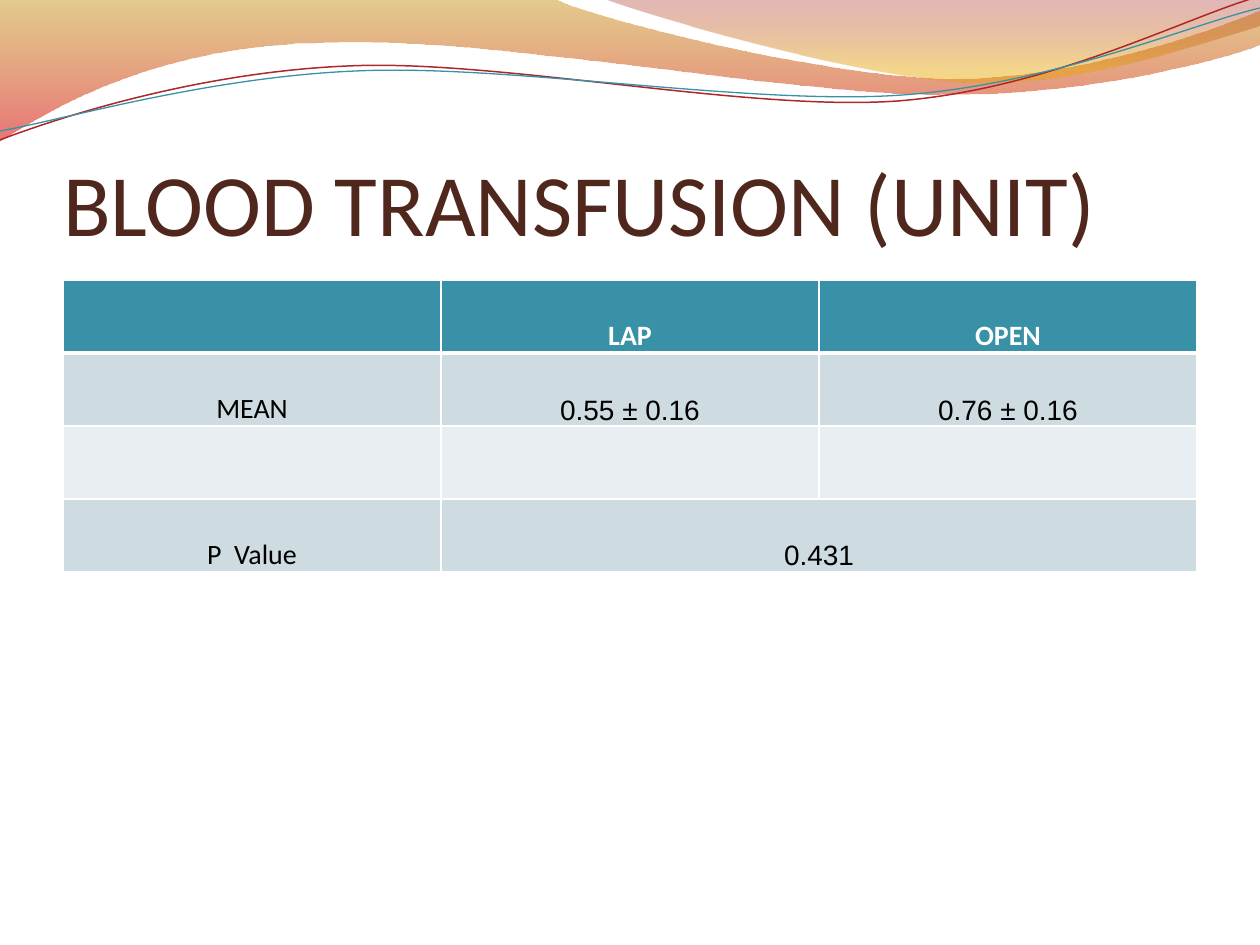
from math import cos, radians, sin

from lxml import etree
from pptx import Presentation
from pptx.dml.color import RGBColor
from pptx.enum.text import MSO_ANCHOR, MSO_AUTO_SIZE, PP_ALIGN
from pptx.oxml.ns import qn
from pptx.util import Pt

SCALE = 914400 / 126
BOTTOM = MSO_ANCHOR.BOTTOM
LEFT, CENTER = PP_ALIGN.LEFT, PP_ALIGN.CENTER

WHITE = RGBColor(0xFF, 0xFF, 0xFF)
BLACK = RGBColor(0x00, 0x00, 0x00)
BROWN = RGBColor(0x4F, 0x27, 0x1C)
TEAL = RGBColor(0x38, 0x91, 0xA7)
RED = RGBColor(0xAC, 0x28, 0x29)
BAND_DARK = RGBColor(0xCE, 0xDC, 0xE1)
BAND_LIGHT = RGBColor(0xE8, 0xEE, 0xF1)
GOLD = RGBColor(0xC3, 0x8B, 0x00)
SCARLET = RGBColor(0xD6, 0x03, 0x05)
CRIMSON = RGBColor(0xA1, 0x11, 0x12)
AMBER = RGBColor(0xE9, 0xA6, 0x00)

TITLE = "BLOOD TRANSFUSION (UNIT)"
ROWS = [
    ("", "LAP", "OPEN"),
    ("MEAN", "0.55 ± 0.16", "0.76 ± 0.16"),
    ("", "", ""),
    ("P  Value", "0.431", ""),
]
ROW_FILLS = [TEAL, BAND_DARK, BAND_LIGHT, BAND_DARK]
TABLE_LEFT, TABLE_TOP, COLUMN_WIDTH, ROW_HEIGHT = 63, 280, 378, 73

# Each wave starts with its box: left, top, width, height.
# Each step is one point (straight line) or three points (cubic curve), in px.
# Gradient stops are (position %, colour, opacity %).
WAVE_FILLS = [
    ((-1, -1, 1263, 144),
     [[(0, 0)], [(554, -1)],
      [(600, 21), (837, 79), (955, 79)],
      [(1075, 79), (1207, 33), (1260, 11)], [(1261, 45)],
      [(1239, 55), (1096, 96), (940, 95)],
      [(784, 95), (481, 35), (324, 43)],
      [(163, 45), (58, 105), (-1, 142)], [(0, 0)]],
     [(0, GOLD, 45), (100, SCARLET, 55)]),
    ((604, -1, 656, 88),
     [[(604, -1)],
      [(641, 14), (859, 78), (969, 82)],
      [(1079, 87), (1211, 40), (1260, 26)], [(1260, 0)], [(604, -1)]],
     [(0, CRIMSON, 30), (80, AMBER, 45)]),
]
WAVE_LINES = [
    ((-3, 28, 1263, 89),
     [[(0, 140)],
      [(60, 117), (199, 72), (349, 66)],
      [(498, 59), (747, 112), (898, 101)],
      [(1050, 89), (1182, 19), (1257, -3)]], RED, 0.85),
    ((-3, 38, 1264, 73),
     [[(0, 131)],
      [(59, 121), (207, 77), (357, 71)],
      [(508, 64), (752, 106), (903, 95)],
      [(1053, 84), (1186, 26), (1260, 8)]], TEAL, 0.75),
]
LINE_TILT = -2.7


def px(value):
    return round(value * SCALE)


def add_wave(slide, box, steps, tilt=0, close=False):
    """Draw the steps as they show on the slide, in a box turned by tilt degrees."""
    left, top, width, height = box
    builder = slide.shapes.build_freeform(px(left), px(top), scale=1.0)
    builder.add_line_segments([(px(left + width), px(top + height))], close=close)
    shape = builder.convert_to_shape()
    shape.shadow.inherit = False
    shape.rotation = tilt

    def inside_box(point):
        x, y = point[0] - left - width / 2, point[1] - top - height / 2
        angle = radians(-tilt)
        return (px(x * cos(angle) - y * sin(angle) + width / 2),
                px(x * sin(angle) + y * cos(angle) + height / 2))

    outline = next(shape.element.iter(qn("a:path")))
    for old in list(outline):
        outline.remove(old)
    for index, step in enumerate(steps):
        name = "moveTo" if index == 0 else "lnTo" if len(step) == 1 else "cubicBezTo"
        segment = etree.SubElement(outline, qn("a:" + name))
        for x, y in map(inside_box, step):
            etree.SubElement(segment, qn("a:pt"), x=str(x), y=str(y))
    if close:
        etree.SubElement(outline, qn("a:close"))
    return shape


def set_gradient(shape, stops):
    """Fill from top to bottom with partly transparent colours."""
    shape.fill.gradient()
    gradient = shape.element.spPr.find(qn("a:gradFill"))
    stop_list = gradient.find(qn("a:gsLst"))
    for stop in list(stop_list):
        stop_list.remove(stop)
    for position, color, opacity in stops:
        stop = etree.SubElement(stop_list, qn("a:gs"), pos=str(position * 1000))
        rgb = etree.SubElement(stop, qn("a:srgbClr"), val=str(color))
        etree.SubElement(rgb, qn("a:alpha"), val=str(opacity * 1000))
    gradient.find(qn("a:lin")).set("ang", str(90 * 60000))


def write(frame, text, size, color, font="Calibri", bold=False, align=LEFT, spacing=None):
    paragraph = frame.paragraphs[0]
    paragraph.alignment = align
    paragraph.line_spacing = spacing
    run = paragraph.add_run()
    run.text = text
    run.font.name = font
    run.font.size = Pt(size)
    run.font.bold = bold
    run.font.color.rgb = color


def set_borders(cell, **widths):
    properties = cell._tc.get_or_add_tcPr()
    for index, side in enumerate("LRTB"):
        line = etree.Element(qn("a:ln" + side), w=str(Pt(widths.get(side, 1))))
        fill = etree.SubElement(line, qn("a:solidFill"))
        etree.SubElement(fill, qn("a:srgbClr"), val=str(WHITE))
        properties.insert(index, line)


def add_title(slide):
    title = slide.shapes.title
    title.left, title.top, title.width, title.height = px(63), px(97), px(1134), px(157)
    frame = title.text_frame
    frame.margin_left = frame.margin_right = frame.margin_bottom = 0
    frame.margin_top = px(6)
    frame.vertical_anchor = BOTTOM
    frame.word_wrap = True
    frame.auto_size = MSO_AUTO_SIZE.NONE
    write(frame, TITLE, 50, BROWN)
    slide.shapes.element.append(title.element)


def add_results_table(slide):
    row_count, column_count = len(ROWS), len(ROWS[0])
    table = slide.shapes.add_table(
        row_count, column_count, px(TABLE_LEFT), px(TABLE_TOP),
        px(COLUMN_WIDTH * column_count), px(ROW_HEIGHT * row_count)).table
    for row_index, (texts, fill) in enumerate(zip(ROWS, ROW_FILLS)):
        header = row_index == 0
        for column_index, text in enumerate(texts):
            cell = table.cell(row_index, column_index)
            cell.fill.solid()
            cell.fill.fore_color.rgb = fill
            set_borders(cell, B=3 if header else 1, T=3 if row_index == 1 else 1)
            cell.vertical_anchor = BOTTOM
            cell.margin_left = cell.margin_right = px(9)
            cell.margin_top = cell.margin_bottom = 0
            if text:
                write(cell.text_frame, text, 16, WHITE if header else BLACK,
                      font="Calibri" if header or column_index == 0 else "Arial",
                      bold=header, align=CENTER, spacing=1.15)
    table.cell(row_count - 1, 1).merge(table.cell(row_count - 1, column_count - 1))


def main():
    presentation = Presentation()
    presentation.slide_width, presentation.slide_height = px(1260), px(945)
    slide = presentation.slides.add_slide(presentation.slide_layouts[5])
    for box, steps, stops in WAVE_FILLS:
        shape = add_wave(slide, box, steps, close=True)
        set_gradient(shape, stops)
        shape.line.fill.background()
    for box, steps, color, width in WAVE_LINES:
        shape = add_wave(slide, box, steps, tilt=LINE_TILT)
        shape.fill.background()
        shape.line.color.rgb = color
        shape.line.width = Pt(width)
    add_title(slide)
    add_results_table(slide)
    presentation.save("out.pptx")


if __name__ == "__main__":
    main()
